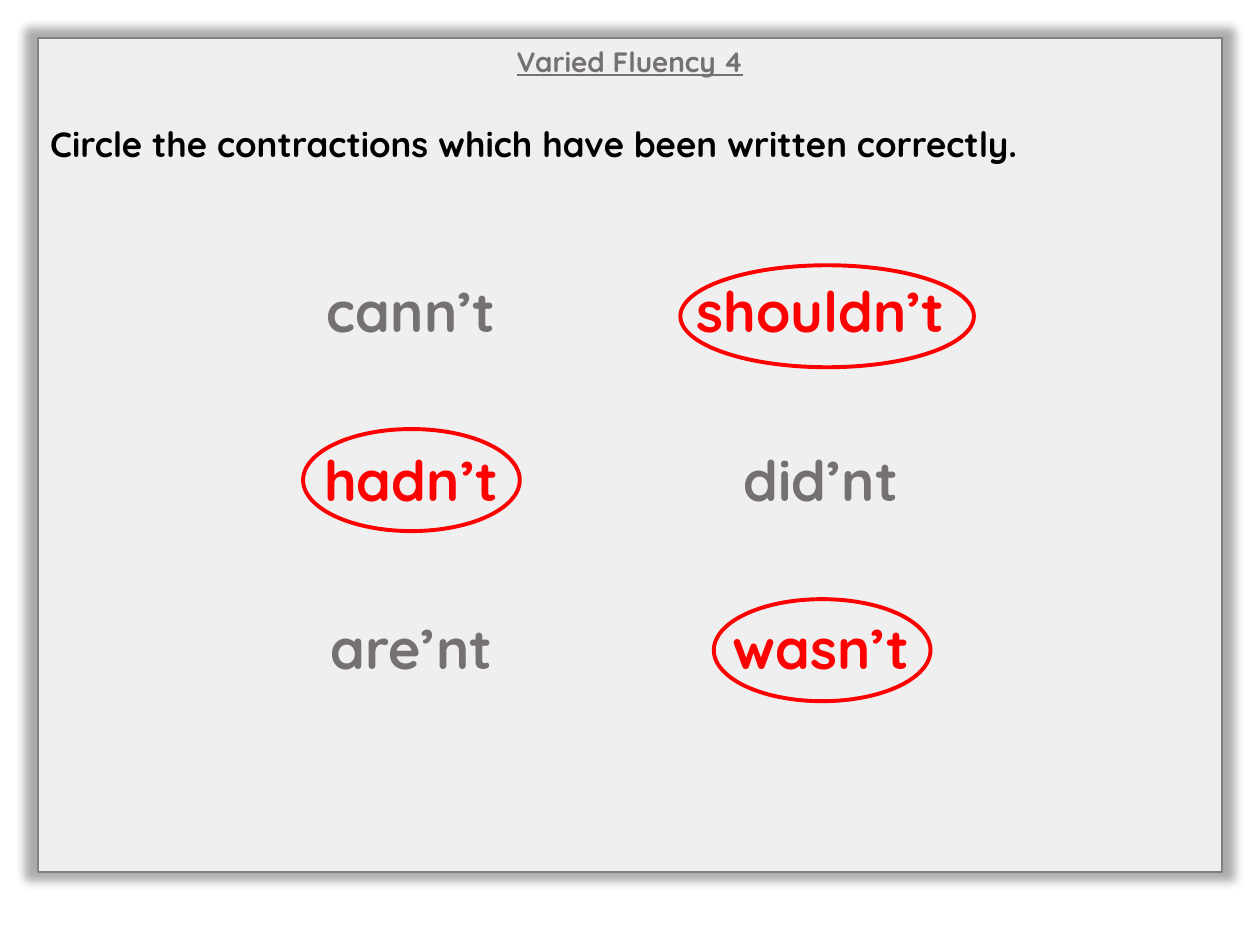
from pptx import Presentation
from pptx.dml.color import RGBColor
from pptx.enum.shapes import MSO_SHAPE as Shape
from pptx.enum.text import MSO_ANCHOR as Anchor, MSO_AUTO_SIZE as Fit, PP_ALIGN as Align
from pptx.oxml import parse_xml
from pptx.oxml.ns import nsdecls, qn
from pptx.util import Inches, Pt

FONT = "Quicksand"
COLORS = {"panel": "FFFFFF", "edge": "808080", "grey": "767171",
          "ink": "000000", "red": "FF0000"}
PLAIN = "{2D5ABB26-0587-4C30-8999-92F81FD0307C}"  # no style, no grid
RING = 0.81

# Each word, with its ring (width, shift right, shift down) if it is correct
WORDS = [
    [("cann’t", None), ("shouldn’t", (2.33, 0.05, 0.04))],
    [("hadn’t", (1.72, 0, 0)), ("did’nt", None)],
    [("are’nt", None), ("wasn’t", (1.72, 0.01, 0.01))],
]


def rgb(name):
    return RGBColor.from_string(COLORS[name])


def write(frame, text, size, color, align):
    para = frame.paragraphs[0]
    para.text = text
    para.alignment = align
    para.line_spacing = 1.0
    font = para.font
    font.name, font.size, font.bold = FONT, Pt(size), True
    font.color.rgb = rgb(color)
    return font


def add_panel(slide, x, y, w, h):
    box = slide.shapes.add_shape(Shape.RECTANGLE, Inches(x), Inches(y), Inches(w), Inches(h))
    box.fill.solid()
    box.fill.fore_color.rgb = rgb("panel")
    tint = box.fill._xPr.find(qn("a:solidFill"))[0]
    tint.append(parse_xml(f'<a:alpha {nsdecls("a")} val="82000"/>'))
    box.line.color.rgb = rgb("edge")
    box.line.width = Pt(1)
    # Soft shadow, spread evenly round the panel
    box._element.spPr.append(parse_xml(
        f'<a:effectLst {nsdecls("a")}><a:outerShdw blurRad="63500" sx="102000" sy="102000" '
        'algn="ctr" rotWithShape="0"><a:srgbClr val="000000"><a:alpha val="40000"/>'
        '</a:srgbClr></a:outerShdw></a:effectLst>'))
    # Instruction
    frame = box.text_frame
    frame.word_wrap = True
    frame.vertical_anchor = Anchor.TOP
    frame.margin_top = Inches(0.67)
    write(frame, "Circle the contractions which have been written correctly.",
          20, "ink", Align.LEFT)
    # Keep the panel behind the title
    slide.shapes._spTree.insert(2, box._element)


def set_title(slide, x, y, w, h):
    title = slide.shapes.title
    title.left, title.top, title.width, title.height = map(Inches, (x, y, w, h))
    frame = title.text_frame
    frame.auto_size = Fit.NONE
    frame.vertical_anchor = Anchor.TOP
    write(frame, "Varied Fluency 4", 16, "grey", Align.CENTER).underline = True


def add_ring(slide, mid_x, mid_y, w, h):
    ring = slide.shapes.add_shape(Shape.OVAL, Inches(mid_x - w / 2), Inches(mid_y - h / 2),
                                  Inches(w), Inches(h))
    ring.shadow.inherit = False
    ring.fill.background()
    ring.line.color.rgb = rgb("red")
    ring.line.width = Pt(2.25)


def add_words(slide, x, y, w, h):
    rows, cols = len(WORDS), len(WORDS[0])
    cell_w, cell_h = w / cols, h / rows
    table = slide.shapes.add_table(rows, cols, Inches(x), Inches(y),
                                   Inches(w), Inches(h)).table
    table.first_row = table.horz_banding = False
    table._tbl.tblPr.find(qn("a:tableStyleId")).text = PLAIN
    for r, line in enumerate(WORDS):
        for c, (word, ring) in enumerate(line):
            cell = table.cell(r, c)
            cell.fill.background()
            cell.vertical_anchor = Anchor.MIDDLE
            cell.margin_left = cell.margin_right = Inches(0.19)
            cell.margin_top = cell.margin_bottom = Inches(0.1)
            write(cell.text_frame, word, 32, "red" if ring else "grey", Align.CENTER)
            if ring:
                wide, dx, dy = ring
                add_ring(slide, x + (c + 0.5) * cell_w + dx,
                         y + (r + 0.5) * cell_h + dy, wide, RING)


def main():
    deck = Presentation()
    deck.slide_width, deck.slide_height = Inches(10), Inches(7.5)
    slide = deck.slides.add_slide(deck.slide_layouts[5])
    add_panel(slide, 0.3, 0.3, 9.4, 6.62)
    set_title(slide, 0.3, 0.3, 9.4, 0.4)
    add_words(slide, 1.64, 1.8, 6.5, 4.02)
    deck.save("out.pptx")


if __name__ == "__main__":
    main()
